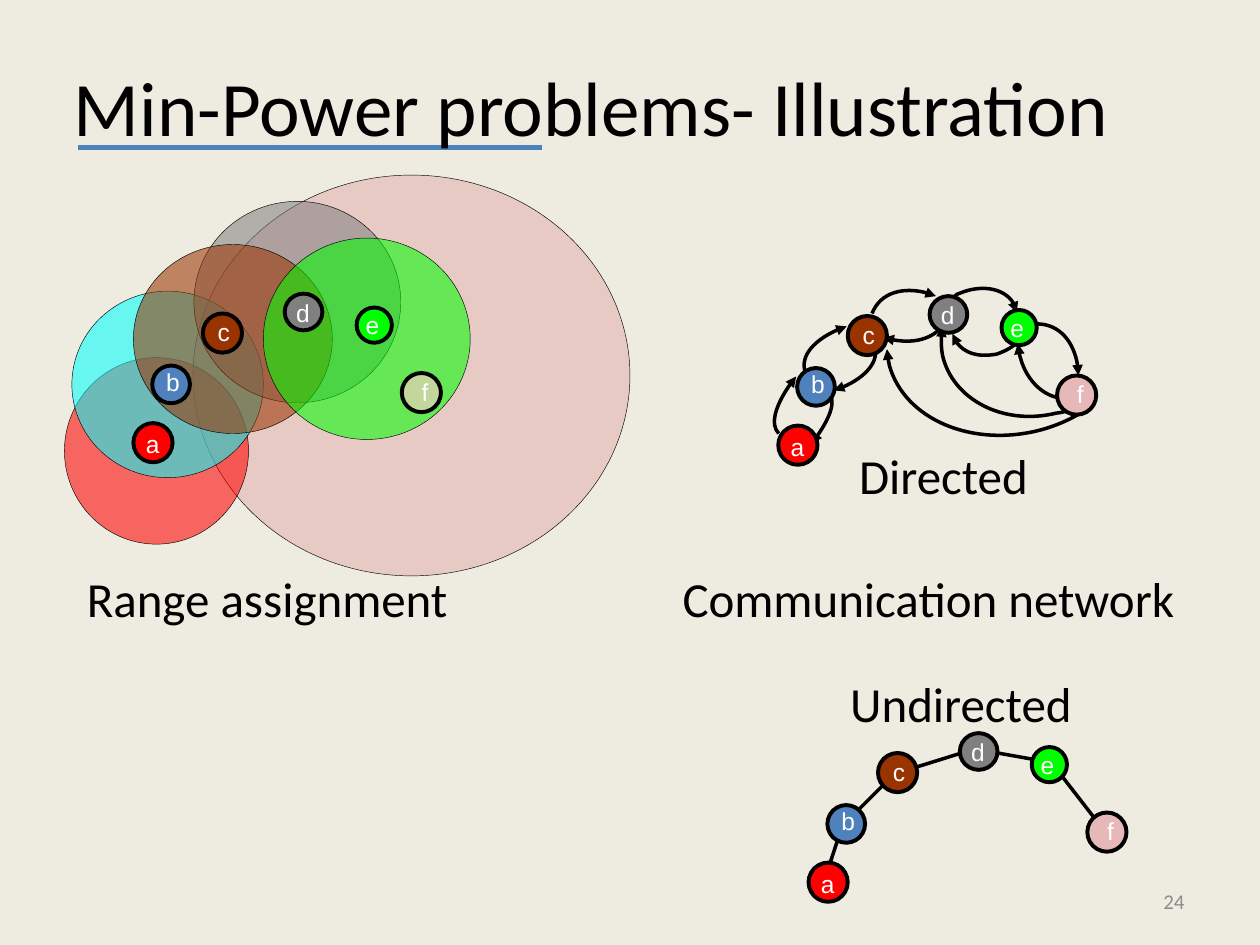
from lxml import etree
from pptx import Presentation
from pptx.dml.color import RGBColor
from pptx.enum.shapes import MSO_CONNECTOR, MSO_SHAPE
from pptx.enum.text import MSO_ANCHOR, PP_ALIGN
from pptx.oxml.ns import qn
from pptx.util import Cm, Pt

STRAIGHT = MSO_CONNECTOR.STRAIGHT
OVAL = MSO_SHAPE.OVAL
MIDDLE, TOP = MSO_ANCHOR.MIDDLE, MSO_ANCHOR.TOP
LEFT, RIGHT = PP_ALIGN.LEFT, PP_ALIGN.RIGHT

COLORS = {
    "background": "EEECE1", "ink": "000000", "accent": "4F81BD",
    "number": "8C8C8C", "label": "FFFFFF",
    "red": "FF0000", "cyan": "00FFFF", "gray": "808080", "brown": "993300",
    "green": "00FF00", "pink": "E6B9B8", "olive": "C3D69B",
}

# All places are in centimetres: left, top, width, height.
TITLE = ("Min-Power problems- Illustration", (1.24, 0.74, 23.65, 2.79))
UNDERLINE = (1.57, 2.97, 10.92, 2.97)
PAGE_NUMBER = ("24", (18.21, 17.65, 5.92, 1.02))
CAPTIONS = [
    ("Range assignment", (1.5, 11.33, 7.87, 1.45)),
    ("Communication network", (13.51, 11.33, 10.54, 1.45)),
    ("Directed", (17.07, 8.86, 3.96, 1.45)),
    ("Undirected", (16.89, 13.46, 5.03, 1.45)),
]

# Transmission ranges, back to front: colour, opacity in percent, place.
RANGES = [
    ("pink", 66, (3.89, 3.53, 8.81, 8.08)),
    ("red", 57, (1.3, 7.21, 3.71, 3.76)),
    ("cyan", 56, (1.45, 5.87, 3.86, 3.76)),
    ("gray", 56, (3.91, 4.06, 4.17, 4.06)),
    ("brown", 56, (2.69, 4.93, 4.01, 3.81)),
    ("green", 56, (5.31, 4.8, 4.17, 4.06)),
]

# Node: colour, place, label offset (x, y), label width.
NODES = {
    "a": ("red", (2.69, 8.53, 0.79, 0.79), (0, 0), 0.79),
    "b": ("accent", (3.07, 7.37, 0.76, 0.76), (0.03, -0.1), 0.79),
    "c": ("brown", (4.09, 6.32, 0.79, 0.79), (0.05, -0.05), 0.76),
    "f": ("olive", (8.1, 7.52, 0.79, 0.79), (0.15, -0.05), 0.66),
    "e": ("green", (7.19, 6.2, 0.71, 0.71), (-0.07, -0.07), 0.79),
    "d": ("gray", (5.74, 5.92, 0.76, 0.74), (-0.02, -0.04), 0.79),
}
NETWORK_NODES = NODES | {
    "f": ("pink", (8.31, 7.52, 0.79, 0.79), (0.15, -0.05), 0.66),
}
DIRECTED_SHIFT = (13, 0.05)
UNDIRECTED_SHIFT = (13.61, 8.86)

# Directed links as Bezier chains: start, then three points per curve.
ARCS = [
    [(16.23, 7.49), (16.13, 7.16), (16.51, 6.76), (17.07, 6.58)],
    [(17.63, 6.99), (17.73, 7.29), (17.37, 7.7), (16.81, 7.87)],
    [(19.25, 5.97), (19.28, 5.94), (19.3, 5.92), (19.33, 5.92),
     (19.79, 5.72), (20.29, 5.82), (20.45, 6.15),
     (20.47, 6.2), (20.47, 6.25), (20.5, 6.3)],
    [(19.1, 6.43), (18.9, 6.81), (18.42, 6.96), (17.91, 6.83),
     (17.88, 6.83), (17.86, 6.81), (17.81, 6.81)],
    [(20.9, 6.53), (21.36, 6.53), (21.74, 6.99), (21.74, 7.57)],
    [(17.58, 6.32), (17.75, 5.89), (18.34, 5.74), (18.87, 5.97)],
    [(15.7, 8.74), (15.52, 8.56), (15.65, 8.08), (16.05, 7.59)],
    [(16.69, 7.92), (16.87, 8.05), (16.71, 8.51), (16.36, 8.94)],
    [(20.5, 6.91), (20.4, 7.01), (20.24, 7.09), (20.09, 7.14),
     (19.69, 7.21), (19.28, 7.06), (19.2, 6.73)],
    [(21.46, 8.03), (21.08, 8.03), (20.7, 7.7), (20.57, 7.21),
     (20.55, 7.14), (20.52, 7.04), (20.52, 6.93)],
    [(21.77, 8.18), (21.62, 8.26), (21.46, 8.31), (21.29, 8.33),
     (20.22, 8.59), (19.2, 8.05), (19, 7.16),
     (18.97, 6.96), (18.97, 6.76), (19, 6.58)],
    [(21.97, 8.2), (21.69, 8.41), (21.36, 8.56), (21.01, 8.66),
     (19.61, 9.04), (18.24, 8.46), (17.93, 7.37),
     (17.91, 7.26), (17.88, 7.16), (17.88, 7.04)],
]
UNDIRECTED_LINKS = [
    (22.1, 16.54, 21.31, 15.52),
    (19.89, 15.14, 20.9, 15.32),
    (18.29, 15.52, 19.51, 15.14),
    (16.69, 17.53, 16.89, 16.92),
    (17.09, 16.54, 17.91, 15.72),
]


def rgb(name):
    return RGBColor.from_string(COLORS[name])


def cm(values):
    return [Cm(value) for value in values]


def add_text(shapes, text, place, size=28, font="Calibri", color="ink",
             align=LEFT, anchor=TOP, wrap=False):
    frame = shapes.add_textbox(*cm(place)).text_frame
    frame.word_wrap = wrap
    frame.vertical_anchor = anchor
    paragraph = frame.paragraphs[0]
    paragraph.alignment = align
    run = paragraph.add_run()
    run.text = text
    run.font.size = Pt(size)
    run.font.name = font
    run.font.color.rgb = rgb(color)


def add_line(shapes, ends, color="ink", width=2):
    line = shapes.add_connector(STRAIGHT, *cm(ends))
    line.line.color.rgb = rgb(color)
    line.line.width = Pt(width)
    etree.SubElement(line._element.spPr, qn("a:effectLst"))


def add_circle(shapes, place, color, line_width, opacity=100):
    circle = shapes.add_shape(OVAL, *cm(place))
    circle.shadow.inherit = False
    circle.fill.solid()
    circle.fill.fore_color.rgb = rgb(color)
    circle.line.color.rgb = rgb("ink")
    circle.line.width = Pt(line_width)
    if opacity < 100:
        fill = circle._element.spPr.find(qn("a:solidFill"))
        etree.SubElement(fill[0], qn("a:alpha"), val=str(opacity * 1000))


def add_arc(shapes, points):
    """Draw a Bezier chain that ends in an arrowhead."""
    start, *rest = [cm(point) for point in points]
    builder = shapes.build_freeform(*start)
    builder.add_line_segments(rest, close=False)
    arc = builder.convert_to_shape()
    arc.shadow.inherit = False
    arc.fill.background()
    arc.line.color.rgb = rgb("ink")
    arc.line.width = Pt(2)
    etree.SubElement(arc.line._get_or_add_ln(), qn("a:tailEnd"), type="triangle")
    outline = next(arc._element.iter(qn("a:path")))
    segments = outline.findall(qn("a:lnTo"))
    for first in range(0, len(segments), 3):
        curve = etree.SubElement(outline, qn("a:cubicBezTo"))
        for segment in segments[first:first + 3]:
            curve.append(segment[0])
            outline.remove(segment)


def add_nodes(shapes, nodes, shift=(0, 0)):
    for name, (color, place, offset, label_width) in nodes.items():
        left, top = place[0] + shift[0], place[1] + shift[1]
        add_circle(shapes, (left, top, *place[2:]), color, 2.25)
        add_text(shapes, name, (left + offset[0], top + offset[1], label_width, 0.84),
                 size=14, font="Arial", color="label")


def main():
    deck = Presentation()
    deck.slide_width, deck.slide_height = Cm(25.4), Cm(19.05)
    slide = deck.slides.add_slide(deck.slide_layouts[6])
    slide.background.fill.solid()
    slide.background.fill.fore_color.rgb = rgb("background")
    shapes = slide.shapes

    add_line(shapes, UNDERLINE, color="accent", width=3)
    add_text(shapes, *PAGE_NUMBER, size=12, color="number", align=RIGHT,
             anchor=MIDDLE, wrap=True)
    add_text(shapes, *TITLE, size=44, anchor=MIDDLE, wrap=True)
    for color, opacity, place in RANGES:
        add_circle(shapes, place, color, 0.25, opacity)
    add_nodes(shapes, NODES)
    for points in ARCS:
        add_arc(shapes, points)
    add_nodes(shapes, NETWORK_NODES, DIRECTED_SHIFT)
    for ends in UNDIRECTED_LINKS:
        add_line(shapes, ends)
    add_nodes(shapes, NETWORK_NODES, UNDIRECTED_SHIFT)
    for text, place in CAPTIONS:
        add_text(shapes, text, place)
    deck.save("out.pptx")


if __name__ == "__main__":
    main()
